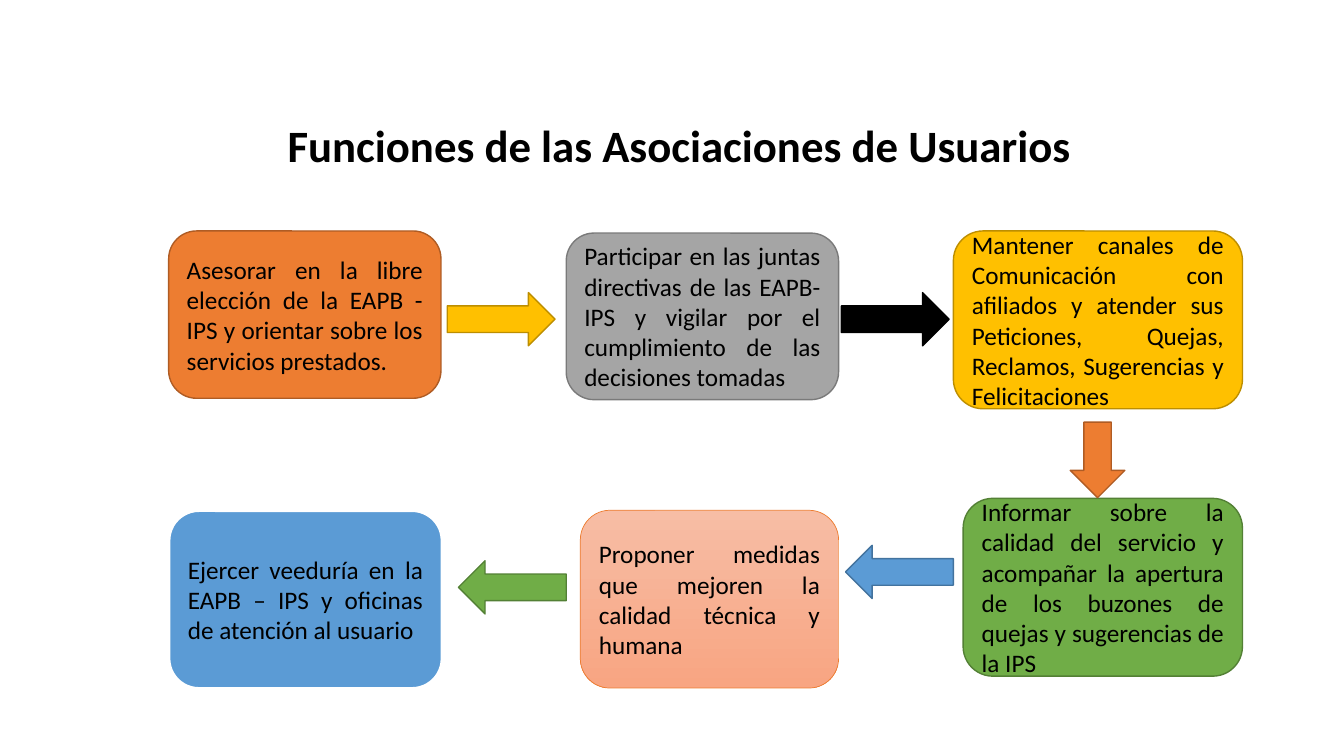
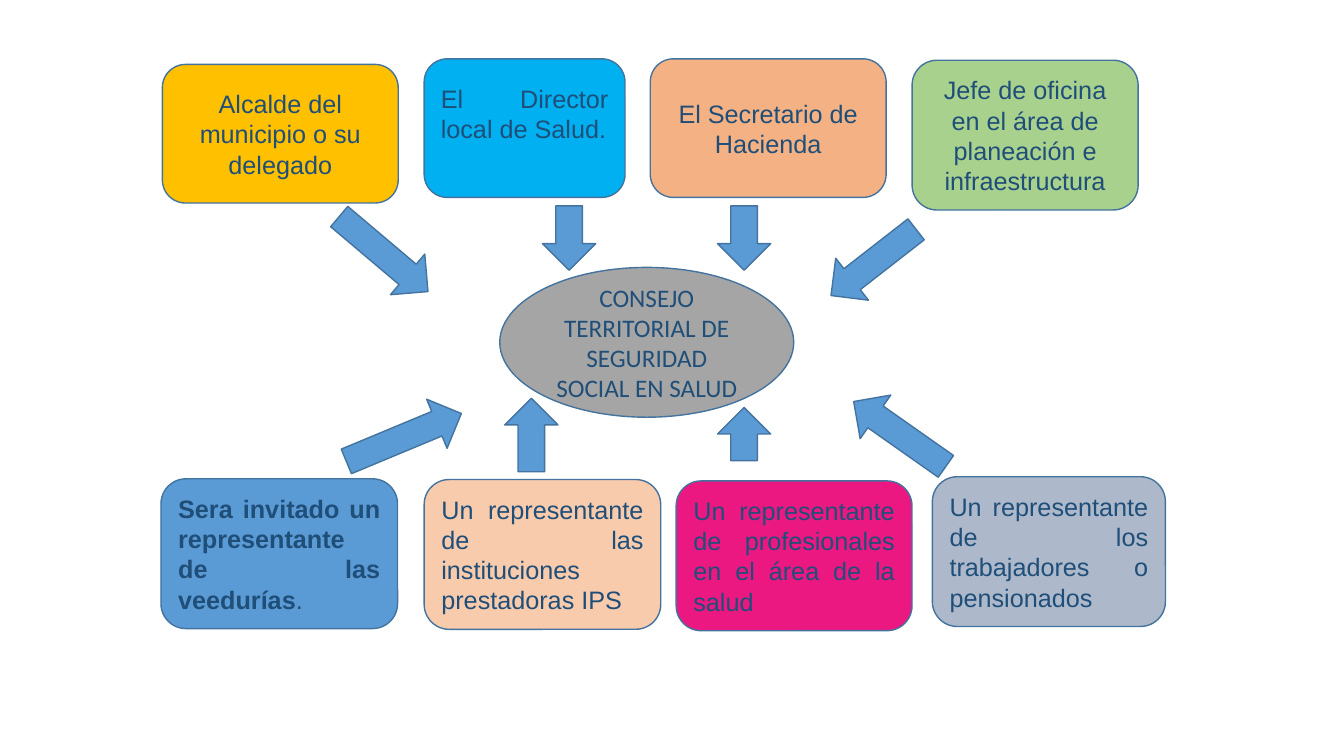
import pptx
import pptx.dml.color
import pptx.enum.shapes
import pptx.enum.text
import pptx.util

Pt = pptx.util.Pt
SHAPES = pptx.enum.shapes.MSO_SHAPE
ALIGN = pptx.enum.text.PP_ALIGN
ANCHOR = pptx.enum.text.MSO_ANCHOR

COLORS = {
    "black": "000000", "white": "FFFFFF", "navy": "1F4E79",
    "orange": "ED7D31", "orange_edge": "AF5C24",
    "gray": "A5A5A5", "gray_edge": "7A7A7A",
    "gold": "FFC000", "gold_edge": "BD8E00",
    "green": "70AD47", "green_edge": "538035",
    "blue": "5B9BD5", "blue_edge": "43739E",
    "salmon_top": "F7BDA5", "salmon_bottom": "F8A582",
    "cyan": "00B0F0", "peach": "F4B183", "light_green": "A9D18E",
    "steel": "ADB9CA", "pink": "EC1882", "cream": "F8CBAD",
}
TITLE_FONT = {"name": "Calibri", "size": Pt(32), "bold": True}
FLOW_FONT = {"name": "Calibri", "size": Pt(18), "bold": False}
COUNCIL_FONT = {"name": "Arial", "size": Pt(18), "bold": False}
ARROW_LENGTH, ARROW_WIDTH = 77, 38
LINE_HEIGHT = 21


def rgb(name):
    return pptx.dml.color.RGBColor.from_string(COLORS[name])


def set_attributes(target, values):
    for key, value in values.items():
        setattr(target, key, value)


def add_span(para, text, font, color):
    span = para.add_run()
    span.text = text
    set_attributes(span.font, font)
    span.font.color.rgb = rgb(color)


def add_figure(page, kind, origin, box, fill, edge, weight=1, rotation=0):
    """Draw a preset shape; box is measured from origin, and a pair of fills makes a gradient."""
    left, top, width, height = box
    figure = page.shapes.add_shape(kind, Pt(origin[0] + left), Pt(origin[1] + top),
                                   Pt(width), Pt(height))
    figure.shadow.inherit = False
    figure.rotation = rotation
    if isinstance(fill, tuple):
        figure.fill.gradient()
        figure.fill.gradient_angle = 270
        for stop, name in zip(figure.fill.gradient_stops, fill):
            stop.color.rgb = rgb(name)
    else:
        figure.fill.solid()
        figure.fill.fore_color.rgb = rgb(fill)
    figure.line.color.rgb = rgb(edge)
    figure.line.width = Pt(weight)
    return figure


def write_text(figure, text, align, font, color):
    frame = figure.text_frame
    set_attributes(frame, {"word_wrap": True, "vertical_anchor": ANCHOR.MIDDLE})
    para = frame.paragraphs[0]
    para.alignment = align
    add_span(para, text, font, color)
    return frame


def add_title(page, text, box):
    title = page.shapes.title
    set_attributes(title, dict(zip(("left", "top", "width", "height"), map(Pt, box))))
    frame = write_text(title, text, ALIGN.CENTER, TITLE_FONT, "black")
    frame.auto_size = pptx.enum.text.MSO_AUTO_SIZE.NONE


def add_function_flow(page, origin):
    """Six functions in a loop: left to right, down, and back to the left."""
    steps = [
        ((0, 0, 194.5, 119.5), "orange", "orange_edge", 1,
         "Asesorar en la libre elección de la EAPB - IPS y orientar sobre los servicios prestados."),
        ((284, 1.5, 194.5, 119), "gray", "gray_edge", 1,
         "Participar en las juntas directivas de las EAPB-IPS y vigilar por el cumplimiento "
         "de las decisiones tomadas"),
        ((560.5, 0, 206.5, 127), "gold", "gold_edge", 1,
         "Mantener canales de Comunicación con afiliados y atender sus Peticiones, Quejas, "
         "Reclamos, Sugerencias y Felicitaciones"),
        ((567.5, 191, 199.5, 127), "green", "green_edge", 1,
         "Informar sobre la calidad del servicio y acompañar la apertura de los buzones de "
         "quejas y sugerencias de la IPS"),
        ((294, 199.5, 184.5, 127), ("salmon_top", "salmon_bottom"), "orange", 0.5,
         "Proponer medidas que mejoren la calidad técnica y humana"),
        ((0.5, 200, 194.5, 126.5), "blue", "white", 1.5,
         "Ejercer veeduría en la EAPB – IPS y oficinas de atención al usuario"),
    ]
    for box, fill, edge, weight, text in steps:
        step = add_figure(page, SHAPES.ROUNDED_RECTANGLE, origin, box, fill, edge, weight)
        write_text(step, text, ALIGN.JUSTIFY, FLOW_FONT, "black")

    level = (ARROW_LENGTH, ARROW_WIDTH)
    arrows = [
        (SHAPES.RIGHT_ARROW, (199, 44), level, "gold", "gold_edge"),
        (SHAPES.RIGHT_ARROW, (480.5, 44), level, "black", "black"),
        (SHAPES.DOWN_ARROW, (644, 136.5), (39, 54), "orange", "orange_edge"),
        (SHAPES.LEFT_ARROW, (483.5, 224.5), level, "blue", "blue_edge"),
        (SHAPES.LEFT_ARROW, (207, 235.5), level, "green", "green_edge"),
    ]
    for kind, place, size, fill, edge in arrows:
        add_figure(page, kind, origin, place + size, fill, edge)


def add_council(page, origin):
    """Members above and below the council, each with an arrow to it."""
    center, justify = ALIGN.CENTER, ALIGN.JUSTIFY
    members = [
        ((1, 4, 168.5, 99), "gold", center, "Alcalde del municipio o su delegado"),
        ((188, 0, 143.5, 99), "cyan", justify, "El Director local de Salud."),
        ((349.5, 0, 168.5, 99), "peach", center, "El Secretario de Hacienda"),
        ((536.5, 1, 161.5, 107), "light_green", center,
         "Jefe de oficina en el área de planeación e infraestructura"),
        ((551, 298.5, 166.5, 107), "steel", justify,
         "Un representante de los trabajadores o pensionados"),
        ((368, 301.5, 168.5, 107), "pink", justify,
         "Un representante de profesionales en el área de la salud"),
        ((188, 300.5, 169, 107), "cream", justify,
         "Un representante de las instituciones prestadoras IPS"),
        ((0, 300, 169, 107), "blue", justify,
         "Sera invitado un representante de las veedurías"),
    ]
    frames = []
    for box, fill, align, text in members:
        member = add_figure(page, SHAPES.ROUNDED_RECTANGLE, origin, box, fill, "blue_edge")
        frames.append(write_text(member, text, align, COUNCIL_FONT, "navy"))
    director, guest = frames[1], frames[-1]
    director.margin_bottom += Pt(LINE_HEIGHT)
    guest.paragraphs[0].runs[0].font.bold = True
    add_span(guest.paragraphs[0], ".", COUNCIL_FONT, "navy")

    council = add_figure(page, SHAPES.OVAL, origin, (242, 149, 210, 107), "gray", "blue_edge")
    write_text(council, "CONSEJO TERRITORIAL DE SEGURIDAD SOCIAL EN SALUD", center,
               FLOW_FONT, "navy")

    arrows = [
        (SHAPES.RIGHT_ARROW, (117.5, 120.5, 83, ARROW_WIDTH), 40.2),
        (SHAPES.DOWN_ARROW, (272.5, 105, ARROW_WIDTH, 46), 0),
        (SHAPES.DOWN_ARROW, (397.5, 105, ARROW_WIDTH, 46), 0),
        (SHAPES.DOWN_ARROW, (490, 107, ARROW_WIDTH, ARROW_LENGTH), 52.1),
        (SHAPES.LEFT_ARROW, (487.5, 249, 80.5, ARROW_WIDTH), 35.1),
        (SHAPES.UP_ARROW, (397.5, 249, ARROW_WIDTH, 38), 0),
        (SHAPES.UP_ARROW, (245.5, 242.5, ARROW_WIDTH, 52.5), 0),
        (SHAPES.UP_ARROW, (154.5, 226, ARROW_WIDTH, 89), 67.4),
    ]
    for kind, box, rotation in arrows:
        add_figure(page, kind, origin, box, "blue", "blue_edge", rotation=rotation)


def main():
    deck = pptx.Presentation()
    set_attributes(deck, {"slide_width": Pt(960), "slide_height": Pt(540)})
    title_only, blank = deck.slide_layouts[5], deck.slide_layouts[6]

    functions_page = deck.slides.add_slide(title_only)
    add_title(functions_page, "Funciones de las Asociaciones de Usuarios", (186.5, 80, 598, 46))
    add_function_flow(functions_page, (120.5, 165))

    add_council(deck.slides.add_slide(blank), (115, 42))
    deck.save("out.pptx")


if __name__ == "__main__":
    main()
